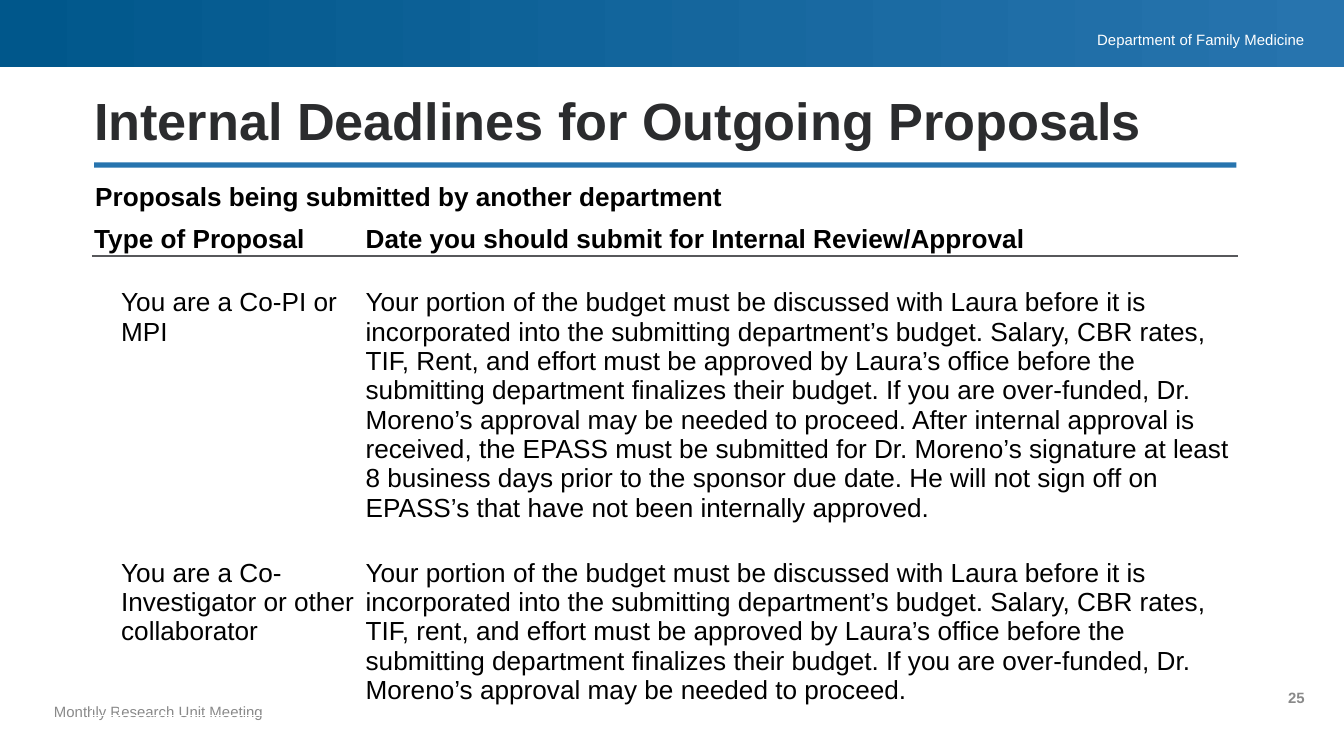
"""Build the slide on internal deadlines for outgoing proposals."""
from dataclasses import dataclass

from lxml import etree
from pptx import Presentation
from pptx import util as u
from pptx.dml.color import RGBColor
from pptx.enum import shapes, text
from pptx.oxml import ns

Cm, Pt = u.Cm, u.Pt


@dataclass(frozen=True)
class Theme:
    font: str = "Arial"
    dark_blue: str = "00578B"
    blue: str = "2774AE"
    white: str = "FFFFFF"
    black: str = "000000"
    ink: str = "2B2C2E"
    grey: str = "898989"
    rule: str = "57585B"
    title: int = 28
    body: int = 14
    small: int = 8


T = Theme()

BUDGET = (
    "Your portion of the budget must be discussed with Laura before it is "
    "incorporated into the submitting department’s budget. Salary, CBR rates, "
    "TIF, {rent}, and effort must be approved by Laura’s office before the "
    "submitting department finalizes their budget. If you are over-funded, "
    "Dr. Moreno’s approval may be needed to proceed."
)
SIGNATURE = (
    " After internal approval is received, the EPASS must be submitted for "
    "Dr. Moreno’s signature at least 8 business days prior to the sponsor due "
    "date. He will not sign off on EPASS’s that have not been internally approved."
)
HEADER = ("Type of Proposal", "Date you should submit for Internal Review/Approval")
PROPOSALS = (
    ("You are a Co-PI or MPI", BUDGET.format(rent="Rent") + SIGNATURE),
    ("You are a Co-Investigator or other collaborator", BUDGET.format(rent="rent")),
)
COLUMNS = (0.51, 4.62, 16.51)
ROWS = (0.58, 0.61, 5.11, 2.97)


def write(tf, content, size=T.body, color=T.black, bold=False,
          align=text.PP_ALIGN.LEFT, spacing=None, after=0):
    """Put one formatted paragraph in a text frame."""
    p = tf.paragraphs[0]
    p.alignment = align
    p.space_after = Pt(after)
    if spacing:
        p.line_spacing = spacing
    r = p.add_run()
    r.text = content
    r.font.name = T.font
    r.font.size = Pt(size)
    r.font.bold = bold
    r.font.color.rgb = RGBColor.from_string(color)


def add_text(s, box, content, insets=(0, 0, 0, 0), wrap=True,
             anchor=text.MSO_ANCHOR.TOP, **fmt):
    """Add a text box with its insets given as left, top, right, bottom."""
    tf = s.shapes.add_textbox(*map(Cm, box)).text_frame
    tf.margin_left, tf.margin_top, tf.margin_right, tf.margin_bottom = map(Cm, insets)
    tf.word_wrap = wrap
    tf.vertical_anchor = anchor
    write(tf, content, **fmt)


def add_bar(s, box, *colors):
    """Add a borderless bar in one colour or a left-to-right gradient."""
    sp = s.shapes.add_shape(shapes.MSO_SHAPE.RECTANGLE, *map(Cm, box))
    sp.shadow.inherit = False
    sp.line.fill.background()
    if len(colors) == 1:
        sp.fill.solid()
        sp.fill.fore_color.rgb = RGBColor.from_string(colors[0])
        return
    sp.fill.gradient()
    sp.fill.gradient_angle = 0
    for stop, color in zip(sp.fill.gradient_stops, colors):
        stop.color.rgb = RGBColor.from_string(color)


def add_border(cell, side):
    """Draw a thin rule on one side of a table cell."""
    ln = etree.Element(ns.qn(f"a:{side}"), w=str(Pt(1)))
    fill = etree.SubElement(ln, ns.qn("a:solidFill"))
    etree.SubElement(fill, ns.qn("a:srgbClr"), val=T.rule)
    cell._tc.get_or_add_tcPr().insert(0, ln)


def clear_cell(cell):
    """Remove a cell's fill and padding and reduce its empty line."""
    cell.fill.background()
    cell.margin_left = cell.margin_right = Cm(0.03)
    cell.margin_top = cell.margin_bottom = 0
    p = cell.text_frame.paragraphs[0]
    p._p.get_or_add_endParaRPr().set("sz", str(T.body * 100))


def add_deadlines(s):
    """Add the table of proposal types and submission dates."""
    frame = s.shapes.add_table(len(ROWS), len(COLUMNS), Cm(1.75), Cm(4.24),
                               Cm(sum(COLUMNS)), Cm(sum(ROWS)))
    table = frame.table
    table.first_row = table.horz_banding = False
    for column, width in zip(table.columns, COLUMNS):
        column.width = Cm(width)
    for row, height in zip(table.rows, ROWS):
        row.height = Cm(height)
    for cell in table.iter_cells():
        clear_cell(cell)
    for i in range(len(COLUMNS)):
        add_border(table.cell(0, i), "lnB")
        add_border(table.cell(1, i), "lnT")
    table.cell(0, 0).merge(table.cell(0, 1))
    table.cell(1, 0).merge(table.cell(1, 2))
    for i, label in zip((0, 2), HEADER):
        write(table.cell(0, i).text_frame, label, bold=True)
    for row, entries in enumerate(PROPOSALS, start=2):
        for column, entry in enumerate(entries, start=1):
            write(table.cell(row, column).text_frame, entry, after=12)


def main():
    """Create the slide and save it."""
    prs = Presentation()
    prs.slide_width, prs.slide_height = Cm(25.4), Cm(14.29)
    s = prs.slides.add_slide(prs.slide_layouts[6])
    right = text.PP_ALIGN.RIGHT
    bottom = text.MSO_ANCHOR.BOTTOM

    add_bar(s, (1.78, 3.07, 21.59, 0.1), T.blue)
    add_bar(s, (0, 0, 25.4, 1.27), T.dark_blue, T.blue)
    add_text(s, (18.29, 0.58, 6.37, 0.36), "Department of Family Medicine",
             insets=(0.25, 0, 0, 0), size=T.small, color=T.white, align=right)
    add_text(s, (1.02, 13.23, 9.91, 1.02), "Monthly Research Unit Meeting",
             insets=(0, 0, 0, 0.94), anchor=bottom, size=T.small,
             color=T.grey, spacing=0.9)
    add_text(s, (23.39, 13.21, 1.27, 1.02), "25", insets=(0, 0, 0, 0.71),
             size=T.small, color=T.grey, bold=True, align=right)
    add_text(s, (1.78, 1.8, 21.59, 1.07), "Internal Deadlines for Outgoing Proposals",
             anchor=bottom, size=T.title, color=T.ink, bold=True, spacing=0.9)
    add_deadlines(s)
    add_text(s, (1.55, 3.28, 12.42, 0.86),
             "Proposals being submitted by another department",
             insets=(0.25, 0.13, 0.25, 0.13), wrap=False, bold=True, after=12)
    prs.save("out.pptx")


if __name__ == "__main__":
    main()
